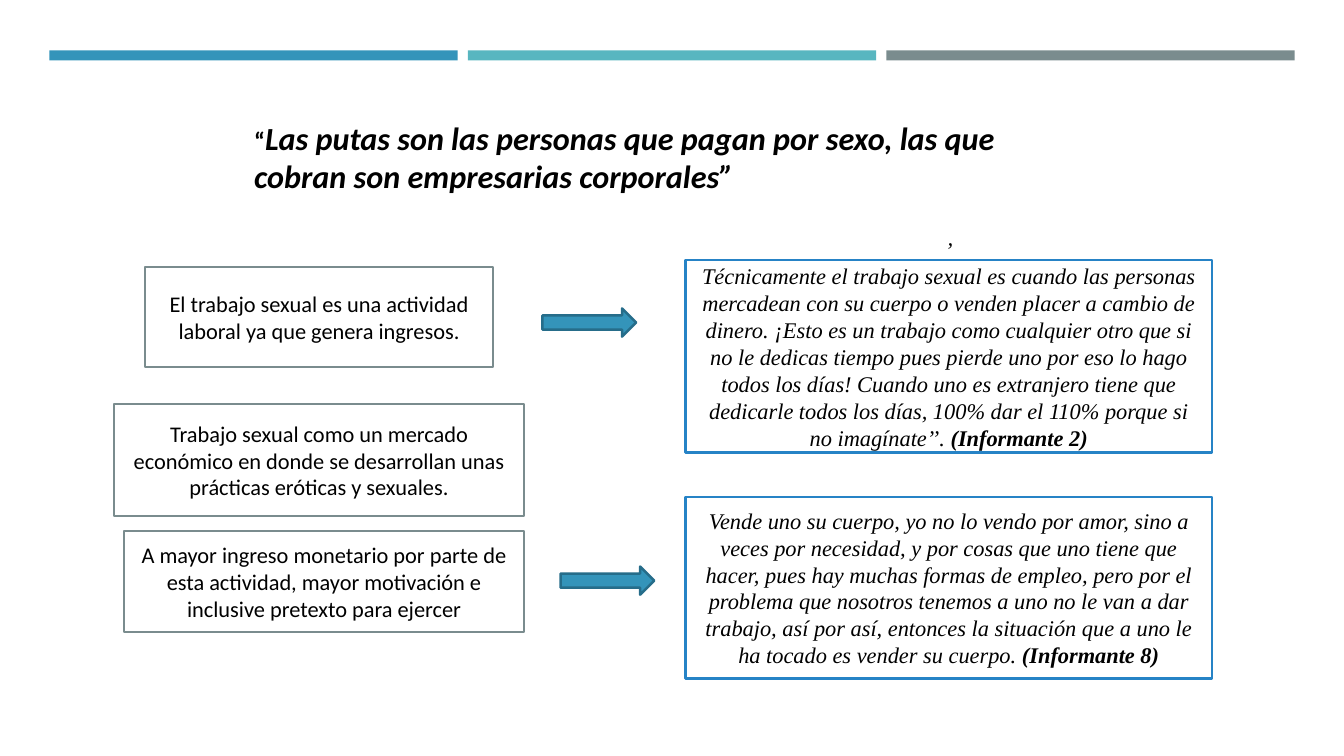
from pptx import Presentation
from pptx.dml.color import RGBColor
from pptx.enum.shapes import MSO_SHAPE as SHAPE
from pptx.enum.text import MSO_ANCHOR as ANCHOR, MSO_AUTO_SIZE as AUTO_SIZE, PP_ALIGN as ALIGN
from pptx.util import Inches, Pt

# Content
TITLE = [
    ("“", {"size": 18, "bold": True}),
    ("Las putas son las personas que pagan por sexo, las que cobran son empresarias corporales”",
     {"size": 23, "bold": True, "italic": True}),
]
BAR_COLORS = ["3494BA", "58B6C0", "7A8C8E"]

# Left, top, width, height, text
IDEAS = [
    (1.44, 2.65, 3.45, 0.99, "El trabajo sexual es una actividad laboral ya que genera ingresos."),
    (1.13, 4.01, 4.07, 1.11, "Trabajo sexual como un mercado económico en donde se desarrollan unas "
                             "prácticas eróticas y sexuales."),
    (1.23, 5.27, 3.97, 1.00, "A mayor ingreso monetario por parte de esta actividad, mayor motivación e "
                             "inclusive pretexto para ejercer"),
]
# Top, height, bottom inset, opening line, quotation, speaker
QUOTES = [
    (2.58, 1.91, 0.31, "’",
     "Técnicamente el trabajo sexual es cuando las personas mercadean con su cuerpo o venden placer "
     "a cambio de dinero. ¡Esto es un trabajo como cualquier otro que si no le dedicas tiempo pues "
     "pierde uno por eso lo hago todos los días! Cuando uno es extranjero tiene que dedicarle todos "
     "los días, 100% dar el 110% porque si no imagínate’’. ", "(Informante 2)"),
    (4.93, 1.80, 0.05, None,
     "Vende uno su cuerpo, yo no lo vendo por amor, sino a veces por necesidad, y por cosas que uno "
     "tiene que hacer, pues hay muchas formas de empleo, pero por el problema que nosotros tenemos a "
     "uno no le van a dar trabajo, así por así, entonces la situación que a uno le ha tocado es "
     "vender su cuerpo. ", "(Informante 8)"),
]
ARROWS = [(5.38, 3.06), (5.56, 5.62)]

# Layout
BAR_LEFT, BAR_TOP, BAR_WIDTH, BAR_HEIGHT, BAR_STEP = 0.49, 0.5, 4.05, 0.1, 4.15
QUOTE_LEFT, QUOTE_WIDTH = 6.8, 5.22
ARROW_WIDTH, ARROW_HEIGHT = 0.93, 0.28
SERIF = "Times New Roman"


def color(value):
    return RGBColor.from_string(value)


def add_text(paragraph, text, size=16, font="Calibri", bold=False, italic=False, align=ALIGN.CENTER):
    paragraph.alignment = align
    run = paragraph.add_run()
    run.text = text
    run.font.name, run.font.size = font, Pt(size)
    run.font.bold, run.font.italic = bold, italic
    run.font.color.rgb = color("000000")


def add_box(slide, left, top, width, height, fill="FFFFFF", line=None, kind=SHAPE.RECTANGLE):
    shape = slide.shapes.add_shape(kind, Inches(left), Inches(top), Inches(width), Inches(height))
    shape.shadow.inherit = False
    shape.fill.solid()
    shape.fill.fore_color.rgb = color(fill)
    if line:
        shape.line.color.rgb = color(line)
        shape.line.width = Pt(1.75)
    else:
        shape.line.fill.background()
    shape.text_frame.word_wrap = True
    shape.text_frame.vertical_anchor = ANCHOR.MIDDLE
    return shape


def main():
    presentation = Presentation()
    presentation.slide_width, presentation.slide_height = Inches(13.33), Inches(7.5)
    slide = presentation.slides.add_slide(presentation.slide_layouts[5])

    # Top bars
    for index, bar_color in enumerate(BAR_COLORS):
        add_box(slide, BAR_LEFT + index * BAR_STEP, BAR_TOP, BAR_WIDTH, BAR_HEIGHT, fill=bar_color)

    # Title
    title = slide.shapes.title
    title.left, title.top, title.width, title.height = map(Inches, (2.42, 1.12, 7.71, 0.88))
    title.text_frame.word_wrap = True
    title.text_frame.auto_size = AUTO_SIZE.NONE
    title.text_frame.vertical_anchor = ANCHOR.TOP
    for text, style in TITLE:
        add_text(title.text_frame.paragraphs[0], text, align=ALIGN.LEFT, **style)

    # Ideas on the left
    for left, top, width, height, text in IDEAS:
        box = add_box(slide, left, top, width, height, line="7A8C8E")
        add_text(box.text_frame.paragraphs[0], text)

    # Quotations on the right
    for top, height, inset, opening, quotation, speaker in QUOTES:
        frame = add_box(slide, QUOTE_LEFT, top, QUOTE_WIDTH, height, line="2683C6").text_frame
        frame.margin_bottom = Inches(inset)
        paragraph = frame.paragraphs[0]
        if opening:
            add_text(paragraph, opening, font=SERIF, italic=True)
            paragraph = frame.add_paragraph()
        add_text(paragraph, quotation, font=SERIF, italic=True)
        add_text(paragraph, speaker, font=SERIF, italic=True, bold=True)

    # Arrows from idea to quotation
    for left, top in ARROWS:
        add_box(slide, left, top, ARROW_WIDTH, ARROW_HEIGHT, fill="3494BA", line="266D8A",
                kind=SHAPE.RIGHT_ARROW)

    presentation.save("out.pptx")


if __name__ == "__main__":
    main()
